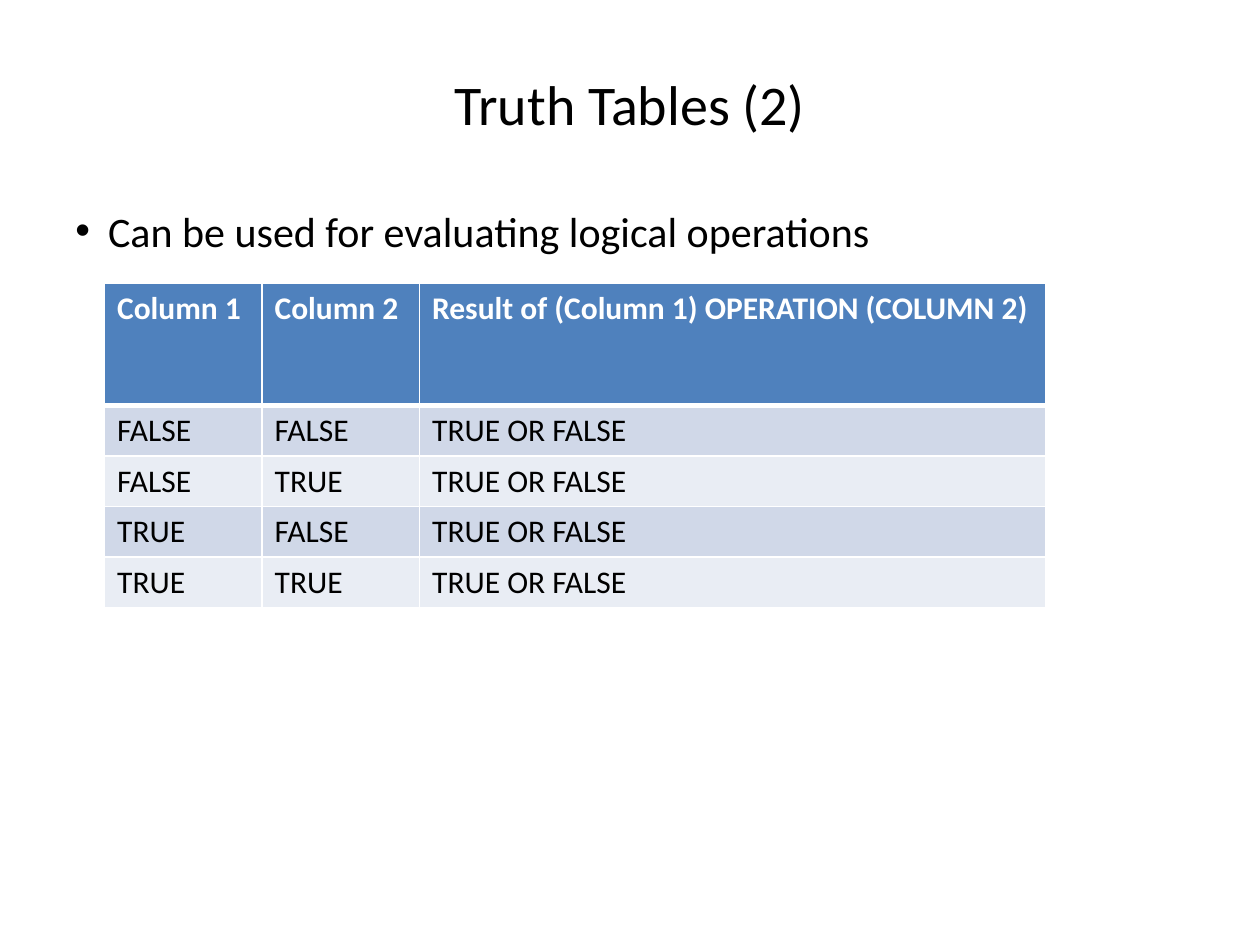
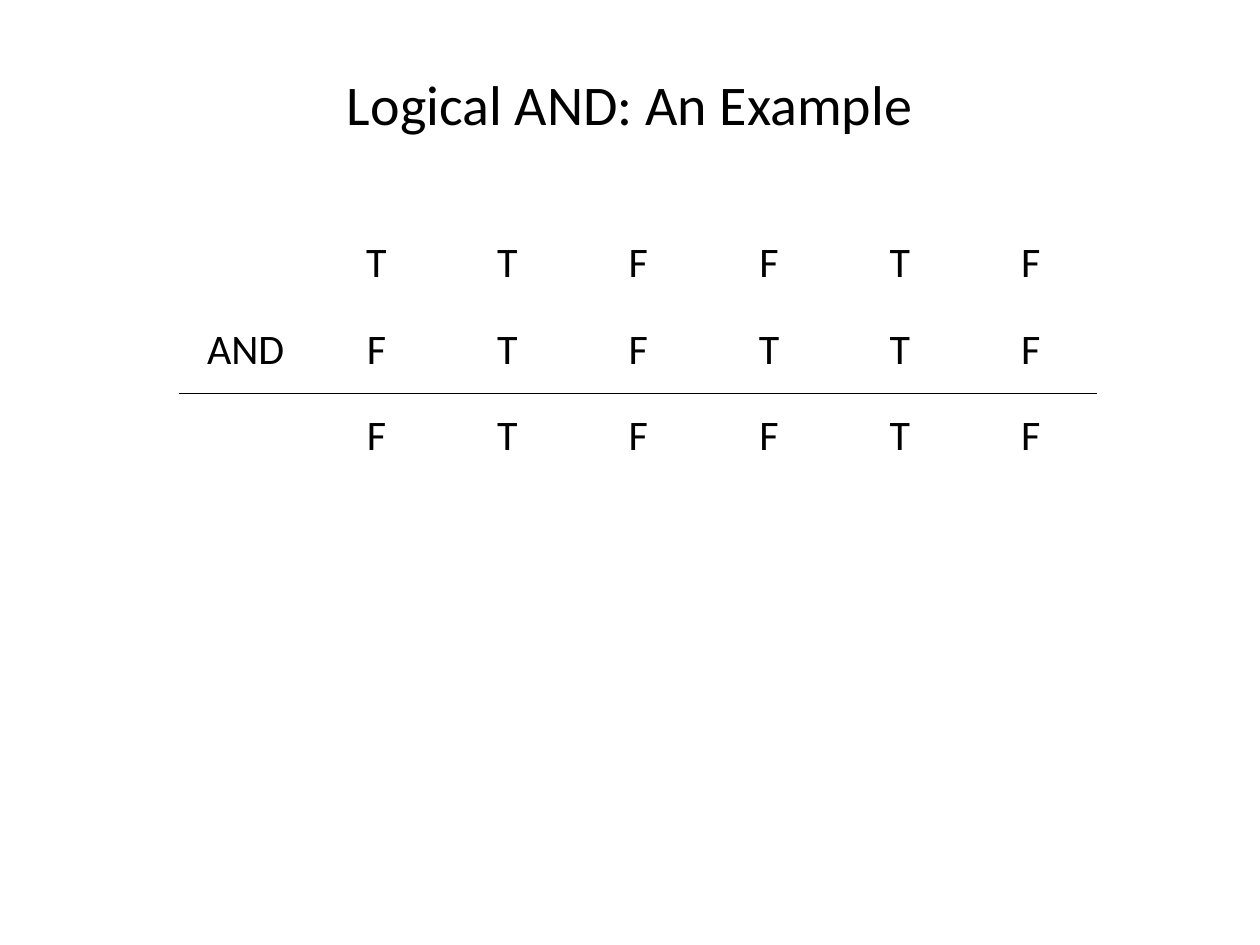
from dataclasses import dataclass

from lxml import etree
from pptx import Presentation
from pptx.dml.color import RGBColor
from pptx.enum.text import MSO_ANCHOR, PP_ALIGN
from pptx.oxml.ns import qn
from pptx.util import Pt

LEFT, CENTER = PP_ALIGN.LEFT, PP_ALIGN.CENTER
TOP, MIDDLE = MSO_ANCHOR.TOP, MSO_ANCHOR.MIDDLE
FONT = "Calibri"
BLACK, WHITE = "000000", "FFFFFF"
HEADER_FILL, BAND_FILLS = "4F81BD", ("D0D8E8", "E9EDF4")
TITLE_ONLY = 5
BULLET_INDENT = 18.72


@dataclass
class CellStyle:
    """Look of a table cell; borders map a side (L, R, T, B) to a width."""
    size: float
    color: str = BLACK
    bold: bool = False
    fill: str | None = None
    align: PP_ALIGN = LEFT
    anchor: MSO_ANCHOR = TOP
    line_spacing: float = 1.0
    border_color: str = WHITE
    borders: dict[str, float] | None = None


@dataclass
class Grid:
    """A table: its place, sizes, wording and one style for each row."""
    left: float
    top: float
    widths: list[float]
    heights: list[float]
    rows: list[list[str]]
    styles: list[CellStyle]


def rgb(color: str) -> RGBColor:
    """Turn a hex string into a colour."""
    return RGBColor.from_string(color)


def write(frame, text: str, *, size: float, color: str = BLACK, bold: bool = False,
          align: PP_ALIGN = LEFT, anchor: MSO_ANCHOR = TOP,
          line_spacing: float = 1.0, space_before: float = 0):
    """Write one formatted paragraph into a text frame and return it."""
    frame.word_wrap = True
    frame.vertical_anchor = anchor
    paragraph = frame.paragraphs[0]
    paragraph.alignment = align
    paragraph.line_spacing = line_spacing
    paragraph.space_before = Pt(space_before)
    run = paragraph.add_run()
    run.text = text
    run.font.name = FONT
    run.font.size = Pt(size)
    run.font.bold = bold
    run.font.color.rgb = rgb(color)
    return paragraph


def add_titled_slide(deck, title: str):
    """Add a slide with the shared title style."""
    slide = deck.slides.add_slide(deck.slide_layouts[TITLE_ONLY])
    heading = slide.shapes.title
    heading.left, heading.top = Pt(36), Pt(21.6)
    heading.width, heading.height = Pt(648), Pt(74.16)
    write(heading.text_frame, title, size=32, align=CENTER, anchor=MIDDLE)
    return slide


def add_bullet(slide, text: str) -> None:
    """Add the body text as one bulleted paragraph."""
    body = slide.shapes.add_textbox(Pt(36), Pt(113.76), Pt(648), Pt(396))
    paragraph = write(body.text_frame, text, size=24, space_before=4.8)
    properties = paragraph._p.get_or_add_pPr()
    properties.set("marL", str(Pt(BULLET_INDENT)))
    properties.set("indent", str(-Pt(BULLET_INDENT)))
    etree.SubElement(properties, qn("a:buFont"), typeface="Arial")
    etree.SubElement(properties, qn("a:buChar"), char="•")


def set_borders(cell, color: str, borders: dict[str, float]) -> None:
    """Draw solid lines on the given sides of a cell."""
    properties = cell._tc.get_or_add_tcPr()
    for side, width in borders.items():
        line = etree.SubElement(properties, qn(f"a:ln{side}"), w=str(Pt(width)))
        solid = etree.SubElement(line, qn("a:solidFill"))
        etree.SubElement(solid, qn("a:srgbClr"), val=color)


def format_cell(cell, text: str, style: CellStyle) -> None:
    """Write a cell and give it its borders and fill."""
    if text:
        write(cell.text_frame, text, size=style.size, color=style.color, bold=style.bold,
              align=style.align, line_spacing=style.line_spacing)
    cell.vertical_anchor = style.anchor
    set_borders(cell, style.border_color, style.borders or {})
    if style.fill:
        cell.fill.solid()
        cell.fill.fore_color.rgb = rgb(style.fill)
    else:
        cell.fill.background()


def add_grid(slide, grid: Grid) -> None:
    """Draw a table."""
    table = slide.shapes.add_table(
        len(grid.rows), len(grid.widths), Pt(grid.left), Pt(grid.top),
        Pt(sum(grid.widths)), Pt(sum(grid.heights))).table
    table.first_row = table.horz_banding = False
    for column, width in zip(table.columns, grid.widths):
        column.width = Pt(width)
    for row, height, texts, style in zip(table.rows, grid.heights, grid.rows, grid.styles):
        row.height = Pt(height)
        for cell, text in zip(row.cells, texts):
            format_cell(cell, text, style)


def truth_table() -> Grid:
    """Describe the general truth table."""
    operands = ("FALSE", "TRUE")
    rows = [["Column 1", "Column 2", "Result of (Column 1) OPERATION (COLUMN 2)"]]
    rows += [[first, second, "TRUE OR FALSE"] for first in operands for second in operands]
    thin = dict.fromkeys("LRTB", 1)
    header = CellStyle(18, WHITE, True, HEADER_FILL, borders=thin | {"B": 3})
    first_band = CellStyle(18, fill=BAND_FILLS[0], borders=thin | {"T": 3})
    bands = [CellStyle(18, fill=fill, borders=thin) for fill in BAND_FILLS]
    styles = [header, first_band, bands[1], *bands]
    return Grid(59.76, 162, [90, 90, 357.84], [69.84] + [28.08] * 4, rows, styles)


def and_example() -> Grid:
    """Describe the column-by-column AND, worked out from its operands."""
    first, second = "TTFFTF", "FTFTTF"
    result = ["T" if pair == ("T", "T") else "F" for pair in zip(first, second)]
    rows = [["", *first], ["AND", *second], ["", *result]]
    styles = [CellStyle(24, align=CENTER, anchor=MIDDLE, line_spacing=0.9,
                        border_color=BLACK, borders=borders)
              for borders in ({}, {"B": 1}, {"T": 1})]
    return Grid(102.96, 126, [74.8] * 7, [49.5] * 3, rows, styles)


def main() -> None:
    """Build and save the slides."""
    deck = Presentation()
    deck.slide_width, deck.slide_height = Pt(720), Pt(540)

    tables_slide = add_titled_slide(deck, "Truth Tables (2)")
    add_bullet(tables_slide, "Can be used for evaluating logical operations")
    add_grid(tables_slide, truth_table())

    example_slide = add_titled_slide(deck, "Logical AND: An Example")
    add_grid(example_slide, and_example())

    deck.save("out.pptx")


if __name__ == "__main__":
    main()
